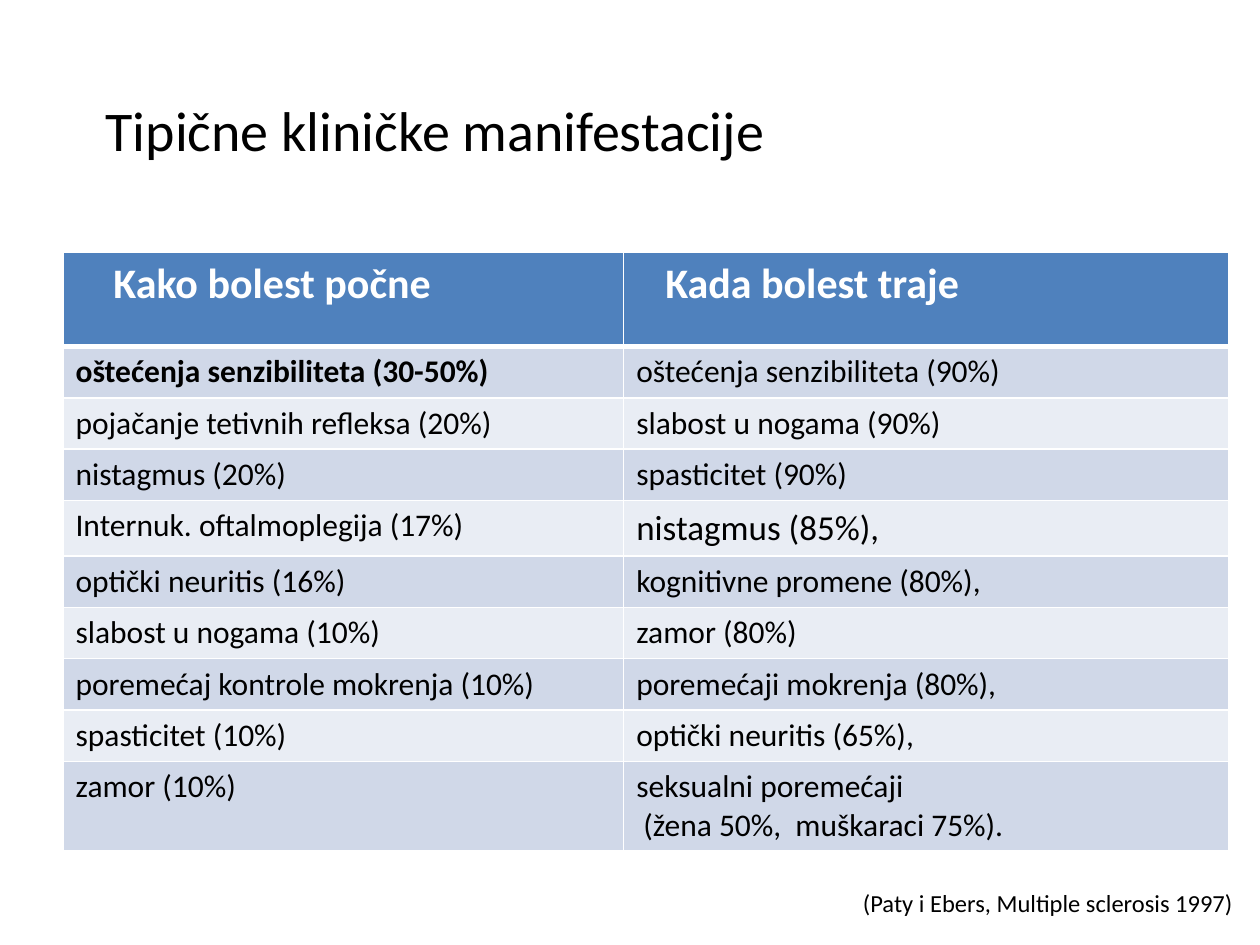
from lxml import etree
from pptx import Presentation
from pptx import util as u
from pptx.dml.color import RGBColor
from pptx.enum import text
from pptx.oxml.ns import qn

BLACK = RGBColor(0x00, 0x00, 0x00)
WHITE = RGBColor(0xFF, 0xFF, 0xFF)
HEADER_BLUE = RGBColor(0x4F, 0x81, 0xBD)
BANDS = (RGBColor(0xD0, 0xD8, 0xE8), RGBColor(0xE9, 0xED, 0xF4))

HEADINGS = ("Kako bolest počne", "Kada bolest traje")
HEADING_INDENTS = (0.3, 0.23)
MANIFESTATIONS = [
    ("oštećenja senzibiliteta (30-50%)", "oštećenja senzibiliteta (90%)"),
    ("pojačanje tetivnih refleksa (20%)", "slabost u nogama (90%)"),
    ("nistagmus (20%)", "spasticitet (90%)"),
    ("Internuk. oftalmoplegija (17%)", "nistagmus (85%),"),
    ("optički neuritis (16%)", "kognitivne promene (80%),"),
    ("slabost u nogama (10%)", "zamor (80%)"),
    ("poremećaj kontrole mokrenja (10%)", "poremećaji mokrenja (80%),"),
    ("spasticitet (10%)", "optički neuritis (65%),"),
    ("zamor (10%)", "seksualni poremećaji\n (žena 50%,  muškaraci 75%)."),
]
BOLD_ENTRY = (1, 0)
LARGE_ENTRY = (4, 1)


class SlideBuilder:
    """Style and current slide; lengths are quarter-inch grid units."""

    font = "Calibri"
    unit = u.Inches(0.25)

    def __init__(self, prs):
        self.slide = prs.slides.add_slide(prs.slide_layouts[5])

    def grid(self, *units):
        return [u.Emu(round(n * self.unit)) for n in units]

    def add_lines(self, frame, content, size, color=BLACK, bold=False, align=None):
        for i, line in enumerate(content.split("\n")):
            paragraph = frame.add_paragraph() if i else frame.paragraphs[0]
            paragraph.alignment = align
            run = paragraph.add_run()
            run.text = line
            run.font.name = self.font
            run.font.size = u.Pt(size)
            run.font.bold = bold
            run.font.color.rgb = color

    def title(self, content, box):
        heading = self.slide.shapes.title
        heading.left, heading.top, heading.width, heading.height = self.grid(*box)
        heading.text_frame.vertical_anchor = text.MSO_ANCHOR.MIDDLE
        self.add_lines(heading.text_frame, content, 32, align=text.PP_ALIGN.CENTER)

    def citation(self, content, box):
        frame = self.slide.shapes.add_textbox(*self.grid(*box)).text_frame
        frame.word_wrap = True
        self.add_lines(frame, content, 14)

    def borders(self, cell, top=1, bottom=1):
        props = cell._tc.get_or_add_tcPr()
        for side, points in (("L", 1), ("R", 1), ("T", top), ("B", bottom)):
            line = etree.SubElement(props, qn(f"a:ln{side}"), w=str(int(u.Pt(points))))
            fill = etree.SubElement(line, qn("a:solidFill"))
            etree.SubElement(fill, qn("a:srgbClr"), val=str(WHITE))

    def cell(self, cell, content, fill, top=1, bottom=1, **style):
        self.borders(cell, top, bottom)
        cell.fill.solid()
        cell.fill.fore_color.rgb = fill
        self.add_lines(cell.text_frame, content, **style)

    def table(self, corner, widths, heights):
        box = (*corner, sum(widths), sum(heights))
        table = self.slide.shapes.add_table(
            len(heights), len(widths), *self.grid(*box)).table
        for column, width in zip(table.columns, self.grid(*widths)):
            column.width = width
        for row, height in zip(table.rows, self.grid(*heights)):
            row.height = height

        # Header row
        for c, (heading, indent) in enumerate(zip(HEADINGS, HEADING_INDENTS)):
            head = table.cell(0, c)
            self.cell(head, heading, HEADER_BLUE, bottom=3,
                      size=24, color=WHITE, bold=True)
            head.margin_left = u.Inches(0.1 + indent)

        # Banded body rows
        for r, entries in enumerate(MANIFESTATIONS, start=1):
            for c, entry in enumerate(entries):
                self.cell(table.cell(r, c), entry, BANDS[(r - 1) % 2],
                          top=3 if r == 1 else 1,
                          size=20 if (r, c) == LARGE_ENTRY else 18,
                          bold=(r, c) == BOLD_ENTRY)


def main():
    prs = Presentation()
    prs.slide_width, prs.slide_height = u.Inches(10), u.Inches(7.5)
    builder = SlideBuilder(prs)
    builder.title("Tipične kliničke manifestacije", (1.32, 1.2, 25, 5.8))
    builder.table((2, 8), (17.8, 19.2), [3] + [1.63] * len(MANIFESTATIONS))
    builder.citation("(Paty i Ebers, Multiple sclerosis 1997)", (27, 28, 13, 1.36))
    prs.save("out.pptx")


if __name__ == "__main__":
    main()
